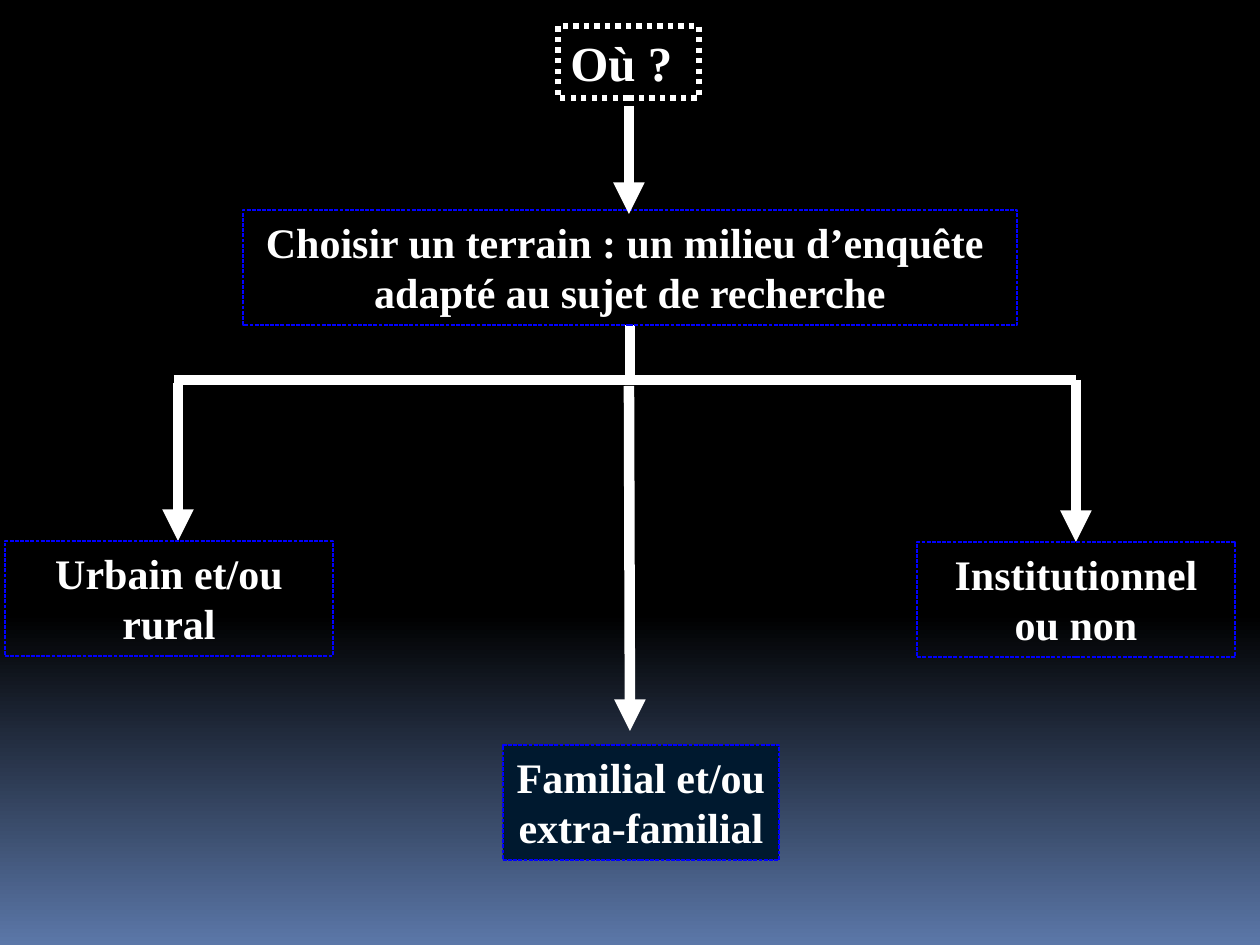
import pptx
import pptx.util
import pptx.dml.color
import pptx.enum.dml
import pptx.enum.shapes
import pptx.enum.text
import pptx.oxml.ns
import lxml.etree

EMU_PER_PX = 914400 / 126
WHITE, BLACK, BLUE, NAVY, SKY = "FFFFFF", "000000", "0000FF", "00192F", "5B77A8"


def px(length):
    return pptx.util.Emu(round(length * EMU_PER_PX))


def color(hex_code):
    return pptx.dml.color.RGBColor.from_string(hex_code)


class Diagram:
    font_name = "Times New Roman"
    dash = pptx.enum.dml.MSO_LINE.SQUARE_DOT

    def __init__(self, slide):
        self.slide = slide

    def background(self, start, end, start_position):
        fill = self.slide.background.fill
        fill.gradient()
        fill.gradient_angle = 270
        for stop, hue, position in zip(fill.gradient_stops, (start, end), (start_position, 1)):
            stop.color.rgb = color(hue)
            stop.position = position

    def line(self, x1, y1, x2, y2, arrow=False):
        connector = self.slide.shapes.add_connector(
            pptx.enum.shapes.MSO_CONNECTOR.STRAIGHT, px(x1), px(y1), px(x2), px(y2))
        connector.line.color.rgb = color(WHITE)
        connector.line.width = pptx.util.Pt(6)
        qn = pptx.oxml.ns.qn
        if arrow:
            outline = connector.line._get_or_add_ln()
            lxml.etree.SubElement(outline, qn("a:tailEnd"), type="triangle")
        lxml.etree.SubElement(connector._element.spPr, qn("a:effectLst"))

    def box(self, x, y, width, height, lines, fill=None, border=BLUE, border_pt=0.75,
            dash="sysDash", size=24, align=pptx.enum.text.PP_ALIGN.CENTER):
        box = self.slide.shapes.add_shape(
            pptx.enum.shapes.MSO_SHAPE.RECTANGLE, px(x), px(y), px(width), px(height))
        box.shadow.inherit = False
        if fill:
            box.fill.solid()
            box.fill.fore_color.rgb = color(fill)
        else:
            box.fill.background()
        box.line.color.rgb = color(border)
        box.line.width = pptx.util.Pt(border_pt)
        lxml.etree.SubElement(
            box.line._get_or_add_ln(), pptx.oxml.ns.qn("a:prstDash"), val=dash)
        frame = box.text_frame
        frame.word_wrap = True
        frame.auto_size = pptx.enum.text.MSO_AUTO_SIZE.SHAPE_TO_FIT_TEXT
        frame.vertical_anchor = pptx.enum.text.MSO_ANCHOR.TOP
        frame.text = "\n".join(lines)
        for paragraph in frame.paragraphs:
            paragraph.alignment = align
            paragraph.font.name = self.font_name
            paragraph.font.size = pptx.util.Pt(size)
            paragraph.font.bold = True
            paragraph.font.color.rgb = color(WHITE)


def main():
    deck = pptx.Presentation()
    deck.slide_width, deck.slide_height = px(1260), px(945)
    diagram = Diagram(deck.slides.add_slide(deck.slide_layouts[6]))
    diagram.background(BLACK, SKY, 0.65)

    diagram.line(630, 325, 630, 380)
    diagram.line(174, 380, 1076, 380)
    for branch in ((629, 386, 630, 731), (1076, 380, 1076, 542), (178, 383, 178, 541)):
        diagram.line(*branch, arrow=True)

    diagram.box(5, 541, 328, 115, ["Urbain et/ou rural"])
    diagram.box(503, 745, 276, 115, ["Familial et/ou extra-familial"], fill=NAVY)
    diagram.box(917, 542, 318, 115, ["Institutionnel ou non"])
    diagram.box(558, 26, 141, 72, ["Où ?"], border=WHITE, border_pt=3, dash="sysDot",
                size=28, align=pptx.enum.text.PP_ALIGN.LEFT)
    diagram.box(243, 210, 774, 115, ["Choisir un terrain : un milieu d’enquête ",
                                     "adapté au sujet de recherche"])
    diagram.line(629, 106, 629, 214, arrow=True)

    deck.save("out.pptx")


if __name__ == "__main__":
    main()
